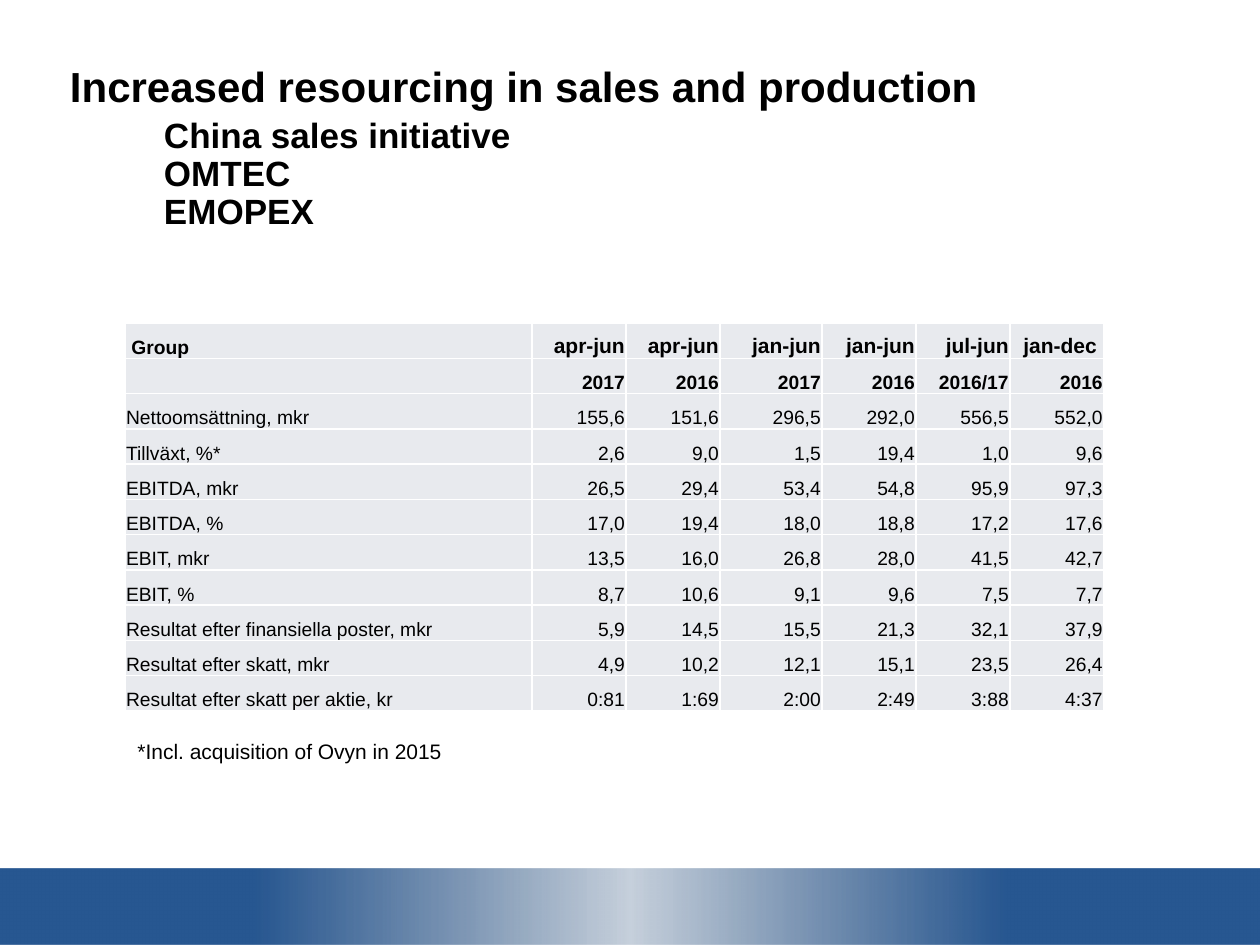
from dataclasses import dataclass

from lxml.etree import SubElement as Sub
from pptx import Presentation
from pptx.dml.color import RGBColor as Rgb
from pptx.enum.shapes import MSO_SHAPE as Kind
from pptx.enum.text import MSO_ANCHOR as Anchor, PP_ALIGN as Align
from pptx.oxml import parse_xml
from pptx.oxml.ns import nsdecls, qn
from pptx.util import Pt

PX = 914400 // 126


@dataclass(frozen=True)
class Theme:
    face: str = "Arial"
    ink: str = "000000"
    cell: str = "E8EAEE"
    rule: str = "FFFFFF"
    band: str = "275791"
    glow: str = "1F4674"
    title: int = 24
    sub: int = 20
    head: int = 12
    body: int = 11
    note: int = 12


@dataclass(frozen=True)
class Box:
    left: int
    top: int
    width: int
    height: int

    def emu(self) -> tuple[int, ...]:
        return tuple(n * PX for n in (self.left, self.top, self.width, self.height))


@dataclass(frozen=True)
class Row:
    label: str
    vals: str
    size: int
    bold: bool = False

    def texts(self) -> list[str]:
        return [self.label, *self.vals.split("|")]


LOOK = Theme()
WIDTHS = (407, 94, 94, 102, 94, 94, 94)
TOPICS = ("China sales initiative", "OMTEC", "EMOPEX")
ROWS = (
    Row(" Group", "apr-jun|apr-jun|jan-jun|jan-jun|jul-jun|jan-dec ", LOOK.head, True),
    Row("", "2017|2016|2017|2016|2016/17|2016", LOOK.body, True),
    Row("Nettoomsättning, mkr", "155,6|151,6|296,5|292,0|556,5|552,0", LOOK.body),
    Row("Tillväxt, %*", "2,6|9,0|1,5|19,4|1,0|9,6", LOOK.body),
    Row("EBITDA, mkr", "26,5|29,4|53,4|54,8|95,9|97,3", LOOK.body),
    Row("EBITDA, %", "17,0|19,4|18,0|18,8|17,2|17,6", LOOK.body),
    Row("EBIT, mkr", "13,5|16,0|26,8|28,0|41,5|42,7", LOOK.body),
    Row("EBIT, %", "8,7|10,6|9,1|9,6|7,5|7,7", LOOK.body),
    Row("Resultat efter finansiella poster, mkr", "5,9|14,5|15,5|21,3|32,1|37,9", LOOK.body),
    Row("Resultat efter skatt, mkr", "4,9|10,2|12,1|15,1|23,5|26,4", LOOK.body),
    Row("Resultat efter skatt per aktie, kr", "0:81|1:69|2:00|2:49|3:88|4:37", LOOK.body),
)


def style(para, size: int, bold: bool = False) -> None:
    font = para.font
    font.name, font.size, font.bold = LOOK.face, Pt(size), bold
    font.color.rgb = Rgb.from_string(LOOK.ink)


def inset(part, side: int, base: int) -> None:
    part.margin_left = part.margin_right = part.margin_top = side * PX
    part.margin_bottom = base * PX


def draw_band(slide, box: Box) -> None:
    """Draw the footer band, which fades to a pale centre."""
    band = slide.shapes.add_shape(Kind.RECTANGLE, *box.emu())
    band.shadow.inherit = False
    band.line.fill.background()
    stops = "".join(
        f'<a:gs pos="{pos * 1000}"><a:srgbClr val="{hue}">'
        f'<a:alpha val="{alpha * 1000}"/></a:srgbClr></a:gs>'
        for pos, hue, alpha in (
            (0, LOOK.band, 100), (20, LOOK.band, 100), (50, LOOK.glow, 25),
            (80, LOOK.band, 100), (100, LOOK.band, 100)))
    fill = parse_xml(f'<a:gradFill {nsdecls("a")} rotWithShape="1"><a:gsLst>{stops}'
                     '</a:gsLst><a:lin ang="0" scaled="0"/></a:gradFill>')
    band._element.spPr.find(qn("a:prstGeom")).addnext(fill)


def draw_title(slide, box: Box) -> None:
    title = slide.shapes.title
    title.left, title.top, title.width, title.height = box.emu()
    frame = title.text_frame
    frame.word_wrap, frame.vertical_anchor = True, Anchor.TOP
    inset(frame, 0, 0)
    frame.text = "\n".join(("Increased resourcing in sales and production", *TOPICS))
    for i, para in enumerate(frame.paragraphs):
        para.alignment, para.line_spacing = Align.LEFT, 0.9
        para.space_before = Pt(4 if i == 1 else 0)
        if i:
            para._p.get_or_add_pPr().set("marL", str(94 * PX))
        style(para, LOOK.sub if i else LOOK.title, True)


def edge(cell) -> None:
    """Give a cell thin rules on all four sides, ahead of its fill."""
    props = cell._tc.get_or_add_tcPr()
    for side in ("lnL", "lnR", "lnT", "lnB"):
        line = Sub(props, qn(f"a:{side}"), w=str(Pt(1)))
        Sub(Sub(line, qn("a:solidFill")), qn("a:srgbClr"), val=LOOK.rule)


def draw_cell(cell, text: str, size: int, bold: bool, align: Align) -> None:
    inset(cell, 1, 0)
    cell.vertical_anchor = Anchor.BOTTOM
    edge(cell)
    cell.fill.solid()
    cell.fill.fore_color.rgb = Rgb.from_string(LOOK.cell)
    para = cell.text_frame.paragraphs[0]
    para.alignment = align
    if text:
        para.text = text
    else:
        Sub(para._p, qn("a:endParaRPr"), sz=str(size * 100))
    style(para, size, bold)


def draw_table(slide, box: Box) -> None:
    table = slide.shapes.add_table(len(ROWS), len(WIDTHS), *box.emu()).table
    table.first_row = table.horz_banding = False
    for col, width in zip(table.columns, WIDTHS):
        col.width = width * PX
    for y, row in enumerate(ROWS):
        for x, text in enumerate(row.texts()):
            draw_cell(table.cell(y, x), text, row.size if x else LOOK.body,
                      row.bold, Align.RIGHT if x else Align.LEFT)


def draw_note(slide, box: Box) -> None:
    frame = slide.shapes.add_textbox(*box.emu()).text_frame
    frame.word_wrap = False
    frame.text = "*Incl. acquisition of Ovyn in 2015"
    style(frame.paragraphs[0], LOOK.note)


def main() -> None:
    deck = Presentation()
    deck.slide_width, deck.slide_height = 1260 * PX, 945 * PX
    slide = deck.slides.add_slide(deck.slide_layouts[5])
    draw_band(slide, Box(0, 869, 1260, 76))
    draw_title(slide, Box(70, 66, 1120, 80))
    draw_table(slide, Box(125, 323, sum(WIDTHS), 388))
    draw_note(slide, Box(125, 732, 333, 38))
    deck.save("out.pptx")


if __name__ == "__main__":
    main()
